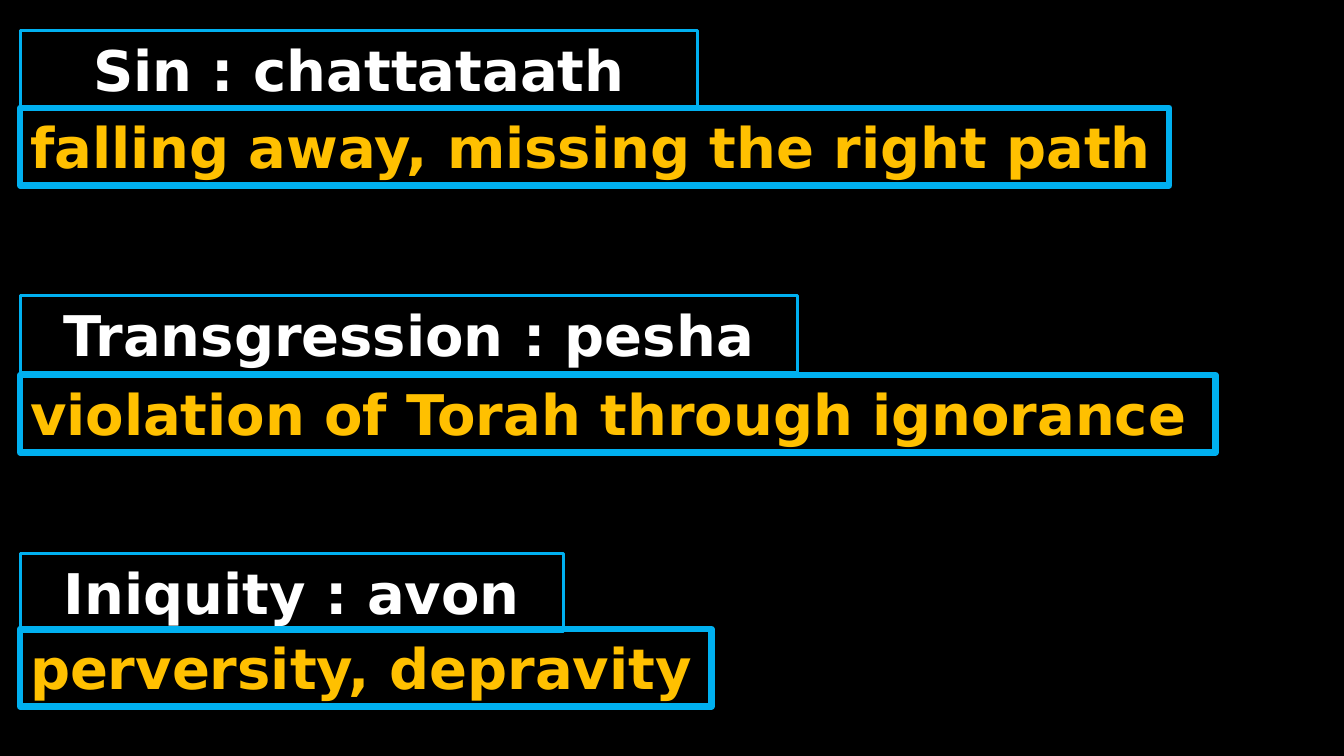
from pptx import Presentation
from pptx.dml.color import RGBColor
from pptx.enum import text
from pptx.util import Pt

BLACK = RGBColor(0x00, 0x00, 0x00)
WHITE = RGBColor(0xFF, 0xFF, 0xFF)
GOLD = RGBColor(0xFF, 0xC0, 0x00)
SKY = RGBColor(0x00, 0xB0, 0xF0)

LEFT, HEIGHT = 14.4, 55.44

# term, its top and width, then meaning, its top and width
DEFINITIONS = [
    ("Sin : chattataath", 21.6, 483.84,
     "falling away, missing the right path", 77.04, 820.8),
    ("Transgression : pesha", 210.96, 555.12,
     "violation of Torah through ignorance", 267.84, 853.92),
    ("Iniquity : avon", 395.28, 388.08,
     "perversity, depravity", 449.28, 493.92),
]


class DefinitionSlide:
    FONT = {"name": "DejaVu Sans", "size": Pt(40), "bold": True}

    def __init__(self, deck):
        self.slide = deck.slides.add_slide(deck.slide_layouts[6])
        background = self.slide.background.fill
        background.solid()
        background.fore_color.rgb = BLACK

    def framed_text(self, wording, top, width, color, border, align):
        box = self.slide.shapes.add_textbox(
            Pt(LEFT), Pt(top), Pt(width), Pt(HEIGHT))
        box.line.color.rgb = SKY
        box.line.width = Pt(border)
        frame = box.text_frame
        frame.word_wrap = True
        frame.auto_size = text.MSO_AUTO_SIZE.SHAPE_TO_FIT_TEXT
        paragraph = frame.paragraphs[0]
        paragraph.alignment = align
        run = paragraph.add_run()
        run.text = wording
        for attribute, value in self.FONT.items():
            setattr(run.font, attribute, value)
        run.font.color.rgb = color
        return box

    def term(self, wording, top, width):
        box = self.framed_text(wording, top, width, WHITE, 2.25,
                               text.PP_ALIGN.CENTER)
        box.fill.solid()
        box.fill.fore_color.rgb = BLACK

    def meaning(self, wording, top, width):
        self.framed_text(wording, top, width, GOLD, 4.5, text.PP_ALIGN.LEFT)


def main():
    deck = Presentation()
    deck.slide_width, deck.slide_height = Pt(960), Pt(540)
    page = DefinitionSlide(deck)
    for term, term_top, term_width, meaning, top, width in DEFINITIONS:
        page.term(term, term_top, term_width)
        page.meaning(meaning, top, width)
    deck.save("out.pptx")


if __name__ == "__main__":
    main()
